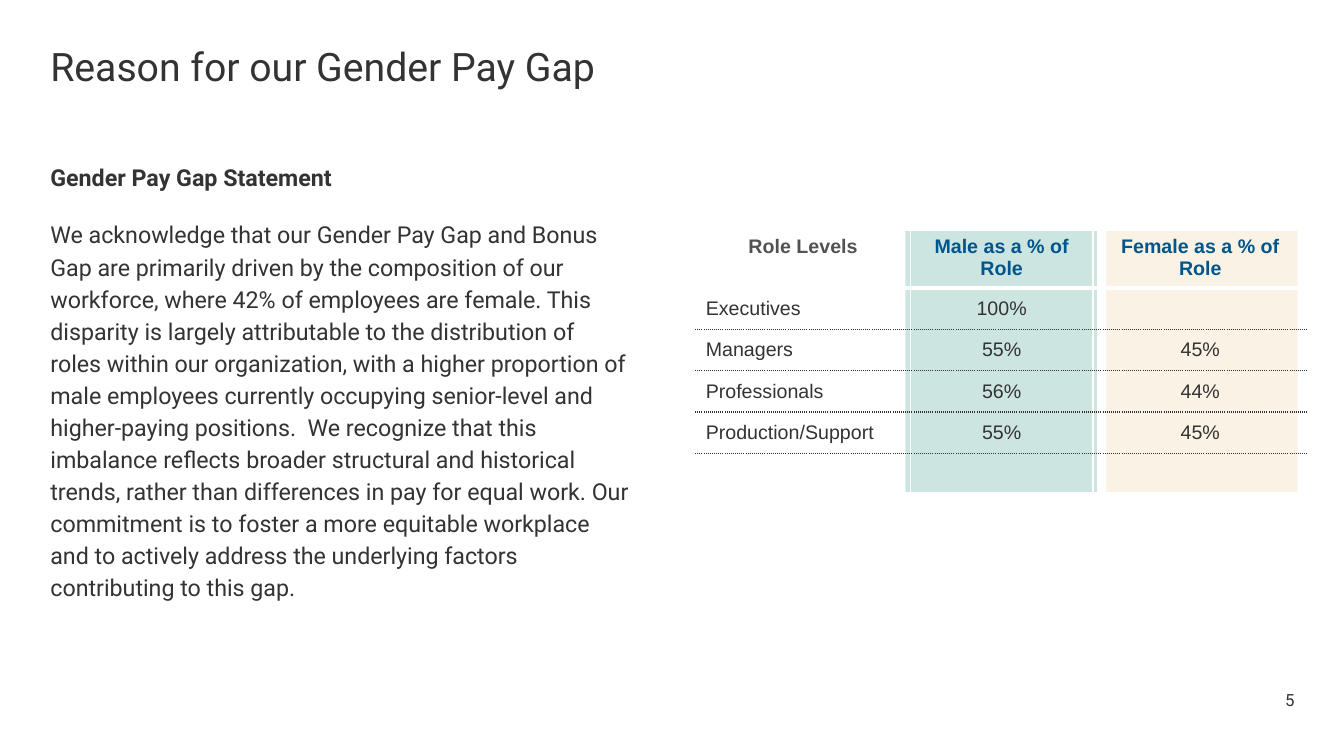
import pptx
import pptx.util
import pptx.dml.color
import pptx.enum.shapes
import pptx.enum.text
import pptx.oxml.ns
from lxml import etree

Inches, Pt = pptx.util.Inches, pptx.util.Pt
ALIGN = pptx.enum.text.PP_ALIGN
ANCHOR = pptx.enum.text.MSO_ANCHOR

# Content
TITLE = "Reason for our Gender Pay Gap"
PAGE_NUMBER = "5"
STATEMENT = [
    "Gender Pay Gap Statement",
    "We acknowledge that our Gender Pay Gap and Bonus Gap are primarily driven by the "
    "composition of our workforce, where 42% of employees are female. This disparity is "
    "largely attributable to the distribution of roles within our organization, with a "
    "higher proportion of male employees currently occupying senior-level and "
    "higher-paying positions.  We recognize that this imbalance reflects broader "
    "structural and historical trends, rather than differences in pay for equal work. "
    "Our commitment is to foster a more equitable workplace and to actively address the "
    "underlying factors contributing to this gap.",
]
ROLES = [
    ("Role Levels", "Male as a % of Role", "Female as a % of Role"),
    ("Executives", "100%", ""),
    ("Managers", "55%", "45%"),
    ("Professionals", "56%", "44%"),
    ("Production/Support", "55%", "45%"),
    ("", "", ""),
]

# Theme
THEME = {
    "text": "333333", "muted": "525252", "heading": "00558B", "white": "FFFFFF",
    "male": "CCE5E1", "female": "F9F2E5",
    "body_font": "Roboto", "table_font": "Arial",
    "title_size": 28, "body_size": 16.6, "table_size": 14, "number_size": 12,
}

# Layout, in inches
MARGIN = 0.5
TABLE_LEFT, TABLE_TOP = 6.9, 2.29
COLUMN_WIDTHS = (2.13, 1.81, 2.13)
HEADER_HEIGHT, ROW_HEIGHT = 0.54, 0.41
TABLE_HEIGHT = HEADER_HEIGHT + ROW_HEIGHT * (len(ROLES) - 1)
BANDS = [(10.97, "female"), (8.98, "male")]
BAND_WIDTH = 1.9


def color(name):
    return pptx.dml.color.RGBColor.from_string(THEME[name])


def style(paragraph, font, size, color_name, bold=False):
    for run in paragraph.runs:
        run.font.name = THEME[font]
        run.font.size = Pt(THEME[size])
        run.font.bold = bold
        run.font.color.rgb = color(color_name)


def add_text(slide, box, texts, size, wrap=True):
    shape = slide.shapes.add_textbox(*[Inches(value) for value in box])
    frame = shape.text_frame
    frame.margin_left = frame.margin_top = frame.margin_right = frame.margin_bottom = 0
    frame.word_wrap = wrap
    frame.text = "\n".join(texts)
    for paragraph in frame.paragraphs:
        style(paragraph, "body_font", size, "text")
    return frame.paragraphs


def set_border(cell, side, color_name, width=1, dash="solid"):
    qn = pptx.oxml.ns.qn
    line = etree.SubElement(cell._tc.get_or_add_tcPr(), qn("a:ln" + side), w=str(Pt(width)))
    fill = etree.SubElement(line, qn("a:solidFill"))
    etree.SubElement(fill, qn("a:srgbClr"), val=THEME[color_name])
    etree.SubElement(line, qn("a:prstDash"), val=dash)


def edge_below(row):
    """Border under a row; row -1 gives the top edge of the table."""
    if row == 0:
        return "white", 3
    if row in (-1, len(ROLES) - 1):
        return "white", 1
    return "text", 1, "sysDot"


def add_role_table(slide):
    table = slide.shapes.add_table(
        len(ROLES), len(COLUMN_WIDTHS), Inches(TABLE_LEFT), Inches(TABLE_TOP),
        Inches(sum(COLUMN_WIDTHS)), Inches(TABLE_HEIGHT)).table
    table.first_row = table.horz_banding = False
    for column, width in zip(table.columns, COLUMN_WIDTHS):
        column.width = Inches(width)
    for r, texts in enumerate(ROLES):
        table.rows[r].height = Inches(ROW_HEIGHT if r else HEADER_HEIGHT)
        for c, text in enumerate(texts):
            cell = table.cell(r, c)
            cell.text = text
            cell.vertical_anchor = ANCHOR.MIDDLE if r else ANCHOR.TOP
            paragraph = cell.text_frame.paragraphs[0]
            paragraph.alignment = ALIGN.LEFT if r and c == 0 else ALIGN.CENTER
            header_color = "heading" if c else "muted"
            style(paragraph, "table_font", "table_size",
                  "text" if r else header_color, bold=r == 0)
            set_border(cell, "L", "white")
            set_border(cell, "R", "white")
            set_border(cell, "T", *edge_below(r - 1))
            set_border(cell, "B", *edge_below(r))
            cell.fill.background()


def main():
    presentation = pptx.Presentation()
    presentation.slide_width, presentation.slide_height = Inches(13.33), Inches(7.5)
    slide = presentation.slides.add_slide(presentation.slide_layouts[6])

    # Page number
    number = add_text(slide, (12.34, 6.84, 0.5, 0.25), [PAGE_NUMBER], "number_size", wrap=False)
    number[0].alignment = ALIGN.RIGHT

    # Colour bands behind the table columns
    for left, fill in BANDS:
        band = slide.shapes.add_shape(
            pptx.enum.shapes.MSO_SHAPE.RECTANGLE, Inches(left), Inches(TABLE_TOP),
            Inches(BAND_WIDTH), Inches(TABLE_HEIGHT))
        band.shadow.inherit = False
        band.fill.solid()
        band.fill.fore_color.rgb = color(fill)
        band.line.fill.background()

    # Title and statement
    title = add_text(slide, (MARGIN, 0.47, 12.33, 1), [TITLE], "title_size")
    title[0].line_spacing = 0.9
    heading, body = add_text(slide, (MARGIN, 1.58, 5.75, 4.35), STATEMENT, "body_size")
    for paragraph in (heading, body):
        paragraph.line_spacing = 1.15
        paragraph.space_after = Pt(8)
    body.space_before = Pt(10)
    heading.runs[0].font.bold = True

    # Role table
    add_role_table(slide)
    presentation.save("out.pptx")


if __name__ == "__main__":
    main()
